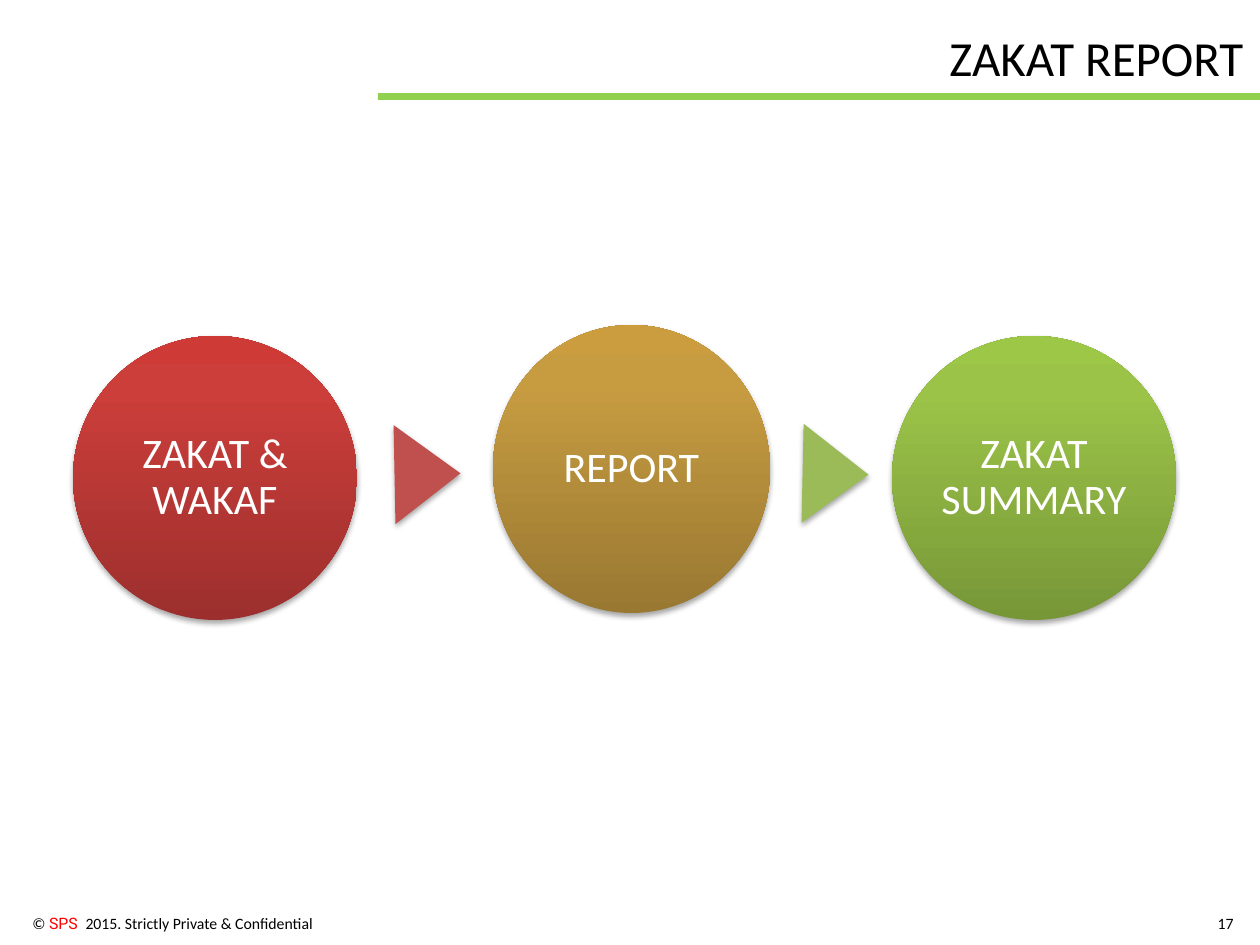
"""Build the zakat report slide: three circles joined by two triangles."""
from pptx import Presentation
from pptx.dml.color import RGBColor
from pptx.enum.shapes import MSO_SHAPE
from pptx.enum.text import MSO_ANCHOR, PP_ALIGN
from pptx.oxml import parse_xml
from pptx.oxml.ns import nsdecls
from pptx.util import Emu, Pt

RECT, OVAL, TRI = MSO_SHAPE.RECTANGLE, MSO_SHAPE.OVAL, MSO_SHAPE.ISOSCELES_TRIANGLE
MIDDLE, TOP = MSO_ANCHOR.MIDDLE, MSO_ANCHOR.TOP
LEFT, CENTER, RIGHT = PP_ALIGN.LEFT, PP_ALIGN.CENTER, PP_ALIGN.RIGHT
BLACK = RGBColor(0x00, 0x00, 0x00)
WHITE = RGBColor(0xFF, 0xFF, 0xFF)
RED = RGBColor(0xFF, 0x00, 0x00)
LIME = RGBColor(0x92, 0xD0, 0x50)
BRICK = RGBColor(0xC0, 0x50, 0x4D)
OLIVE = RGBColor(0x9B, 0xBB, 0x59)
RUST_FADE = [RGBColor(0x9C, 0x2F, 0x2D), RGBColor(0xCB, 0x3E, 0x3A), RGBColor(0xCE, 0x3B, 0x37)]
GOLD_FADE = [RGBColor(0x99, 0x78, 0x32), RGBColor(0xC7, 0x9C, 0x41), RGBColor(0xCB, 0x9D, 0x3F)]
LEAF_FADE = [RGBColor(0x77, 0x97, 0x37), RGBColor(0x9B, 0xC3, 0x48), RGBColor(0x9D, 0xC7, 0x46)]
STOPS = [0, 80000, 100000]
PX = 914400 / 126

deck = Presentation()
deck.slide_width, deck.slide_height = Emu(round(1260 * PX)), Emu(round(945 * PX))
slide = deck.slides.add_slide(deck.slide_layouts[6])


def add_form(kind, box, shade=True):
    form = slide.shapes.add_shape(kind, *[Emu(round(n * PX)) for n in box])
    form.line.fill.background()
    form.shadow.inherit = False
    if shade:
        form._element.spPr[-1].append(parse_xml(
            f'<a:outerShdw {nsdecls("a")} blurRad="40000" dist="23000" dir="5400000" rotWithShape="0">'
            '<a:srgbClr val="000000"><a:alpha val="35000"/></a:srgbClr></a:outerShdw>'))
    return form


def add_text(box, parts, size, align, anchor, wrap=True):
    frame = slide.shapes.add_textbox(*[Emu(round(n * PX)) for n in box]).text_frame
    frame.word_wrap, frame.vertical_anchor = wrap, anchor
    para = frame.paragraphs[0]
    para.alignment = align
    para.font.size = Pt(size)
    for text, face, color in parts:
        run = para.add_run()
        run.text, run.font.name, run.font.color.rgb = text, face, color


rule = add_form(RECT, (378, 93, 882, 7), False)
rule.fill.solid()
rule.fill.fore_color.rgb = LIME

add_text((937, 21, 323, 72), [("ZAKAT REPORT", "Calibri", BLACK)], 28, LEFT, TOP, False)
add_text((-42, 908, 367, 32), [
    ("© ", "Calibri", BLACK),
    ("SPS  ", "Roboto", RED),
    ("2015. Strictly Private & Confidential", "Calibri", BLACK),
], 9, RIGHT, TOP)
add_text((1196, 898, 50, 50), [("17", "Calibri", BLACK)], 9, RIGHT, MIDDLE)

for label, box, fade in [
    ("ZAKAT & WAKAF", (73, 336, 284, 284), RUST_FADE),
    ("REPORT", (493, 325, 277, 288), GOLD_FADE),
    ("ZAKAT SUMMARY", (892, 336, 284, 284), LEAF_FADE),
]:
    disc = add_form(OVAL, box)
    marks = "".join(f'<a:gs pos="{pos}"><a:srgbClr val="{color}"/></a:gs>'
                    for pos, color in zip(STOPS, fade))
    disc._element.spPr.insert(2, parse_xml(
        f'<a:gradFill {nsdecls("a")} rotWithShape="1"><a:gsLst>{marks}</a:gsLst>'
        '<a:lin ang="16200000" scaled="0"/></a:gradFill>'))
    frame = disc.text_frame
    frame.word_wrap, frame.vertical_anchor = True, MIDDLE
    frame.margin_left = frame.margin_right = Emu(round(4 * PX))
    frame.margin_top = frame.margin_bottom = Emu(round(4 * PX))
    para = frame.paragraphs[0]
    para.text, para.alignment, para.line_spacing = label, CENTER, 0.9
    para.font.name, para.font.size = "Calibri", Pt(24)
    para.font.color.rgb = WHITE

for left, turn, color in [(378, 88.9, BRICK), (786, 91.2, OLIVE)]:
    arrow = add_form(TRI, (left, 441, 99, 66))
    arrow.rotation = turn
    arrow.fill.solid()
    arrow.fill.fore_color.rgb = color

deck.save("out.pptx")
